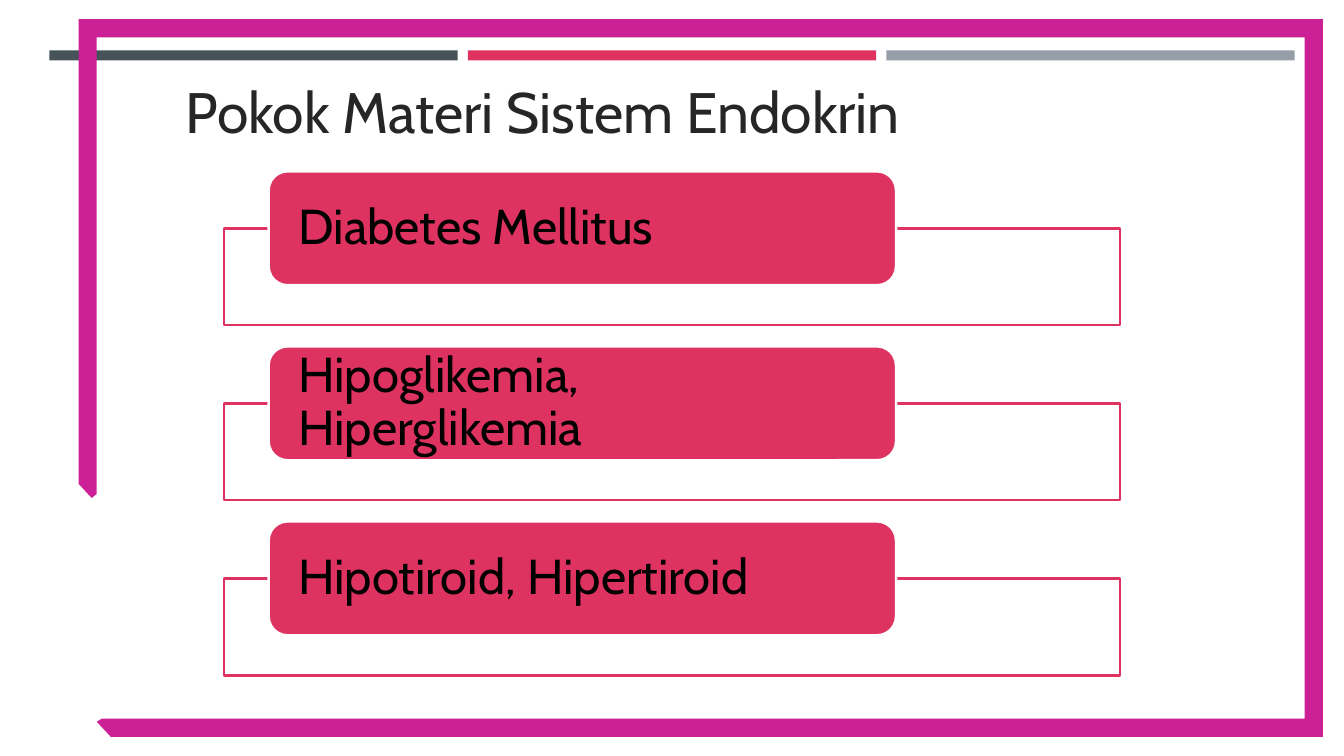
from dataclasses import dataclass

from lxml.etree import SubElement
from pptx import Presentation
from pptx.dml.color import RGBColor as RGB
from pptx.enum.shapes import MSO_SHAPE as Shape
from pptx.enum.text import MSO_ANCHOR as Anchor, PP_ALIGN as Align
from pptx.oxml.ns import qn
from pptx.util import Inches, Pt


@dataclass(frozen=True)
class Theme:
    font: str = "Cabin"
    slate: str = "465359"
    rose: str = "DE3261"
    gray: str = "969FA7"
    frame: str = "CC2097"
    white: str = "FFFFFF"
    black: str = "000000"
    ink: str = "262626"
    title: float = 40.7
    topic: float = 35
    line: float = 1.75


THEME = Theme()
TOPICS = ["Diabetes Mellitus", "Hipoglikemia, Hiperglikemia",
          "Hipotiroid, Hipertiroid"]


def paint(shape, fill, line=None):
    shape.shadow.inherit = False
    shape.fill.solid()
    shape.fill.fore_color.rgb = RGB.from_string(fill)
    if line:
        shape.line.color.rgb = RGB.from_string(line)
        shape.line.width = Pt(THEME.line)
    else:
        shape.line.fill.background()


def add_box(slide, kind, box, fill, line=None):
    shape = slide.shapes.add_shape(kind, *map(Inches, box))
    paint(shape, fill, line)
    return shape


def write(shape, text, size, color, pad, **style):
    """Set one left-aligned paragraph; pad is (side, top and bottom)."""
    frame = shape.text_frame
    side, edge = map(Inches, pad)
    form = dict(word_wrap=True, vertical_anchor=Anchor.MIDDLE,
                margin_left=side, margin_right=side,
                margin_top=edge, margin_bottom=edge)
    for name, value in form.items():
        setattr(frame, name, value)
    para = frame.paragraphs[0]
    for name, value in dict(alignment=Align.LEFT, **style).items():
        setattr(para, name, value)
    run = para.add_run()
    run.text = text
    run.font.name, run.font.size = THEME.font, Pt(size)
    run.font.color.rgb = RGB.from_string(color)


def add_bars(slide, box):
    left, top, width, height = box
    gap = 0.1
    colors = [THEME.slate, THEME.rose, THEME.gray]
    part = (width - gap * 2) / len(colors)
    for i, color in enumerate(colors):
        place = (left + i * (part + gap), top, part, height)
        add_box(slide, Shape.RECTANGLE, place, color)


def add_frame(slide, box):
    """Draw the open border, with cut ends at the lower left."""
    left, top, width, height = box
    band = 0.18
    right, base = width - band, height - band
    points = [(0, 0), (width, 0), (width, height), (0.32, height),
              (band, height - 0.15), (0.23, base), (right, base),
              (right, band), (band, band), (band, 4.71),
              (0.13, 4.75), (0, 4.61)]
    spots = [(Inches(left + x), Inches(top + y)) for x, y in points]
    pen = slide.shapes.build_freeform(*spots[0])
    pen.add_line_segments(spots[1:], close=True)
    paint(pen.convert_to_shape(), THEME.frame)


def add_title(slide, box, text):
    shape = slide.shapes.add_textbox(*map(Inches, box))
    write(shape, text, THEME.title, THEME.ink, (0.1, 0.05))


def add_topic(slide, box, text):
    left, top, width, height = box
    tab = 1.13
    panel = (left, top + tab / 2, width, height - tab / 2)
    back = add_box(slide, Shape.RECTANGLE, panel, THEME.white, THEME.rose)
    color = back.fill._xPr.find(qn("a:solidFill"))[0]
    SubElement(color, qn("a:alpha"), val="90000")
    place = (left + width * 0.05, top, width * 0.7, tab)
    label = add_box(slide, Shape.ROUNDED_RECTANGLE, place,
                    THEME.rose, THEME.white)
    write(label, text, THEME.topic, THEME.black, (0.24, 0), line_spacing=0.9)


def add_topics(slide, box, topics):
    left, top, width, height = box
    gap = 0.21
    step = (height + gap) / len(topics)
    for i, text in enumerate(topics):
        add_topic(slide, (left, top + i * step, width, step - gap), text)


def main():
    deck = Presentation()
    deck.slide_width, deck.slide_height = Inches(13.33), Inches(7.5)
    slide = deck.slides.add_slide(deck.slide_layouts[6])
    add_bars(slide, (0.49, 0.5, 12.35, 0.1))
    add_frame(slide, (0.78, 0.19, 12.34, 7.12))
    add_title(slide, (1.74, 0.7, 11.18, 0.79), "Pokok Materi Sistem Endokrin")
    add_topics(slide, (2.22, 1.7, 8.89, 5), TOPICS)
    deck.save("out.pptx")


if __name__ == "__main__":
    main()
